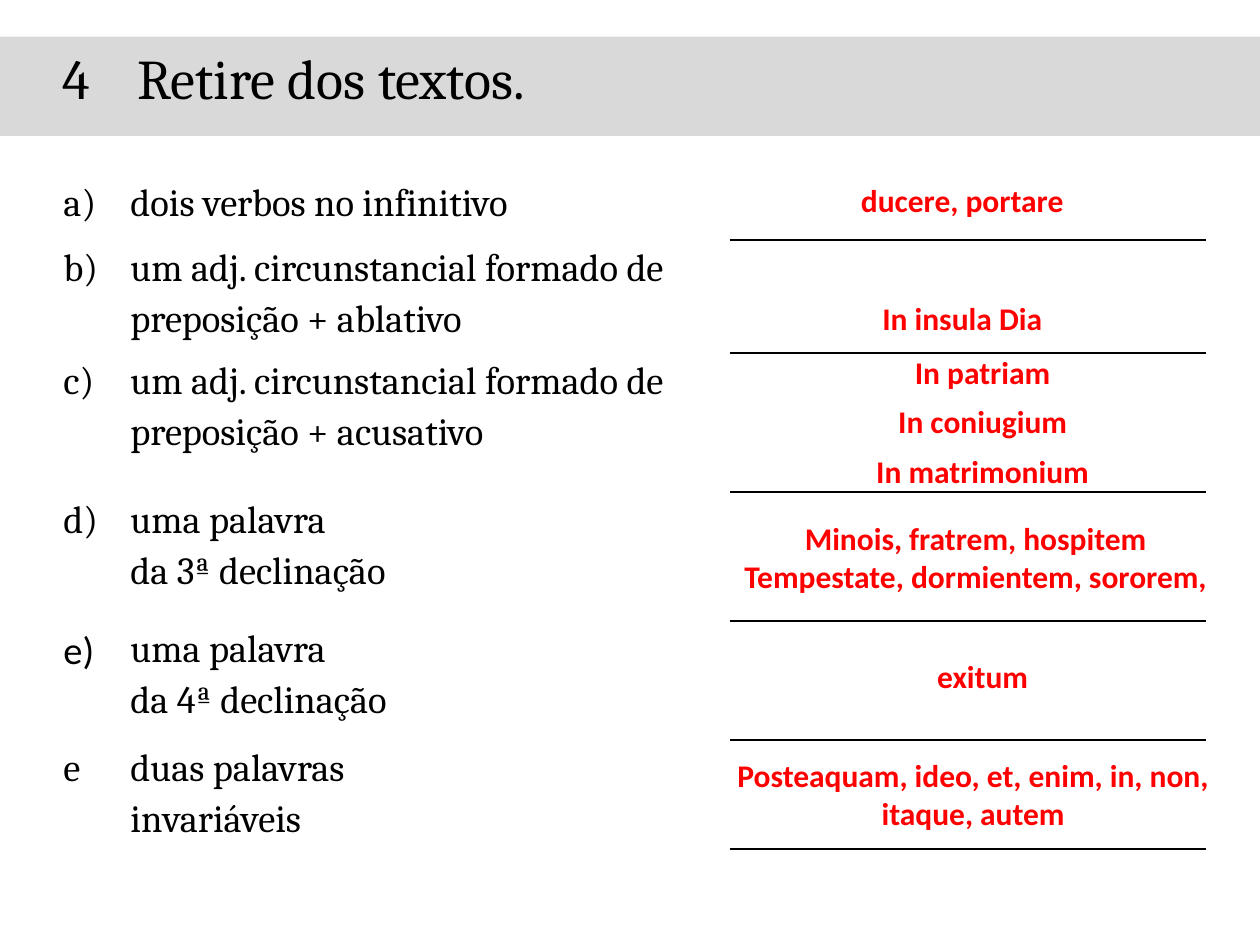
from dataclasses import dataclass

from lxml import etree
from pptx import Presentation
from pptx import util as u
from pptx.dml.color import RGBColor
from pptx.enum import text
from pptx.oxml.ns import qn

NO_STYLE = "{2D5ABB26-0587-4C30-8999-92F81FD0307C}"
SERIF = {"size": u.Pt(22), "name": "Cambria"}
ANSWER = {"size": u.Pt(18), "name": "Calibri", "bold": True}


@dataclass
class Question:
    label: str
    wording: str
    height: float
    label_font: str = "Cambria"


@dataclass
class Answer:
    wording: str
    left: float
    top: float
    width: float = 6.6
    height: float = 1.02


QUESTIONS = [
    Question("a)", "dois verbos no infinitivo", 1.31),
    Question("b)", "um adj. circunstancial formado de preposição + ablativo", 2.28),
    Question("c)", "um adj. circunstancial formado de preposição + acusativo", 2.8),
    Question("d)", "uma palavra\nda 3ª declinação", 2.6),
    Question("e)", "uma palavra\nda 4ª declinação", 2.4, "Calibri"),
    Question("e", "duas palavras\ninvariáveis", 2.2),
]
ANSWERS = [
    Answer("ducere, portare", 14.7, 3.53, 9.4),
    Answer("In insula Dia", 16.1, 5.91),
    Answer("In patriam", 16.51, 7),
    Answer("In coniugium", 16.51, 7.98),
    Answer("In matrimonium", 16.51, 8.98),
    Answer("Minois, fratrem, hospitem\nTempestate, dormientem, sororem,",
           14.07, 10.34, 11.2, 1.8),
    Answer("exitum", 16.51, 13.12),
    Answer("Posteaquam, ideo, et, enim, in, non, itaque, autem",
           13.97, 15.11, 11.3, 1.8),
]


def rgb(value: str) -> RGBColor:
    return RGBColor.from_string(value)


def apply(obj, formats: dict) -> None:
    for key, value in formats.items():
        setattr(obj, key, value)


def write(tf, wording: str, font: dict, color: str, **para) -> None:
    tf.text = wording
    for p in tf.paragraphs:
        apply(p, para)
        for r in p.runs:
            apply(r.font, font)
            r.font.color.rgb = rgb(color)


def add_rule(cell, side: str) -> None:
    """Draw a black 1 pt border on one side of a cell (lnT or lnB)."""
    ln = etree.SubElement(cell._tc.get_or_add_tcPr(), qn(f"a:{side}"), w=str(u.Pt(1)))
    fill = etree.SubElement(ln, qn("a:solidFill"))
    etree.SubElement(fill, qn("a:srgbClr"), val="000000")


def add_heading(s, wording: str, number: int) -> None:
    sp = s.shapes.title
    apply(sp, {"left": 0, "top": u.Cm(0.74), "width": u.Cm(25.4), "height": u.Cm(2)})
    sp.fill.solid()
    sp.fill.fore_color.rgb = rgb("D9D9D9")
    tf = sp.text_frame
    apply(tf, {"auto_size": text.MSO_AUTO_SIZE.NONE,
               "vertical_anchor": text.MSO_ANCHOR.TOP})
    write(tf, wording, {"size": u.Pt(32), "name": "Cambria"}, "000000",
          alignment=text.PP_ALIGN.LEFT)
    # Hanging automatic number
    pPr = tf.paragraphs[0]._p.get_or_add_pPr()
    pPr.set("marL", str(u.Cm(2.52)))
    pPr.set("indent", str(u.Cm(-1.52)))
    etree.SubElement(pPr, qn("a:buFont"), typeface="+mj-lt")
    etree.SubElement(pPr, qn("a:buAutoNum"), type="arabicPlain", startAt=str(number))


def add_questions(s, questions: list[Question]) -> None:
    widths = [1.35, 12.27, 9.6]
    frame = s.shapes.add_table(len(questions), len(widths), u.Cm(1.09), u.Cm(3.53),
                               u.Cm(sum(widths)), u.Cm(sum(q.height for q in questions)))
    table = frame.table
    apply(table, {"first_row": False, "horz_banding": False})
    table._tbl.tblPr.find(qn("a:tableStyleId")).text = NO_STYLE
    for column, width in zip(table.columns, widths):
        column.width = u.Cm(width)
    for i, (row, q) in enumerate(zip(table.rows, questions)):
        row.height = u.Cm(q.height)
        label, wording, blank = row.cells
        for cell in row.cells:
            apply(cell, {"margin_left": u.Cm(0.19), "margin_right": u.Cm(0.19),
                         "margin_top": 0, "margin_bottom": 0})
        write(label.text_frame, q.label, SERIF | {"name": q.label_font}, "000000",
              line_spacing=1.15)
        write(wording.text_frame, q.wording, SERIF, "000000", line_spacing=1.15)
        # Answer lines
        if i:
            add_rule(blank, "lnT")
        add_rule(blank, "lnB")
        for cell in row.cells:
            cell.fill.background()


def add_answer(s, a: Answer) -> None:
    sp = s.shapes.add_textbox(u.Cm(a.left), u.Cm(a.top), u.Cm(a.width), u.Cm(a.height))
    tf = sp.text_frame
    apply(tf, {"word_wrap": True, "auto_size": text.MSO_AUTO_SIZE.SHAPE_TO_FIT_TEXT})
    write(tf, a.wording, ANSWER, "FF0000", alignment=text.PP_ALIGN.CENTER)


def main() -> None:
    prs = Presentation()
    apply(prs, {"slide_width": u.Cm(25.4), "slide_height": u.Cm(19.05)})
    s = prs.slides.add_slide(prs.slide_layouts[5])
    add_heading(s, "Retire dos textos.", 4)
    add_questions(s, QUESTIONS)
    for answer in ANSWERS:
        add_answer(s, answer)
    prs.save("out.pptx")


if __name__ == "__main__":
    main()
